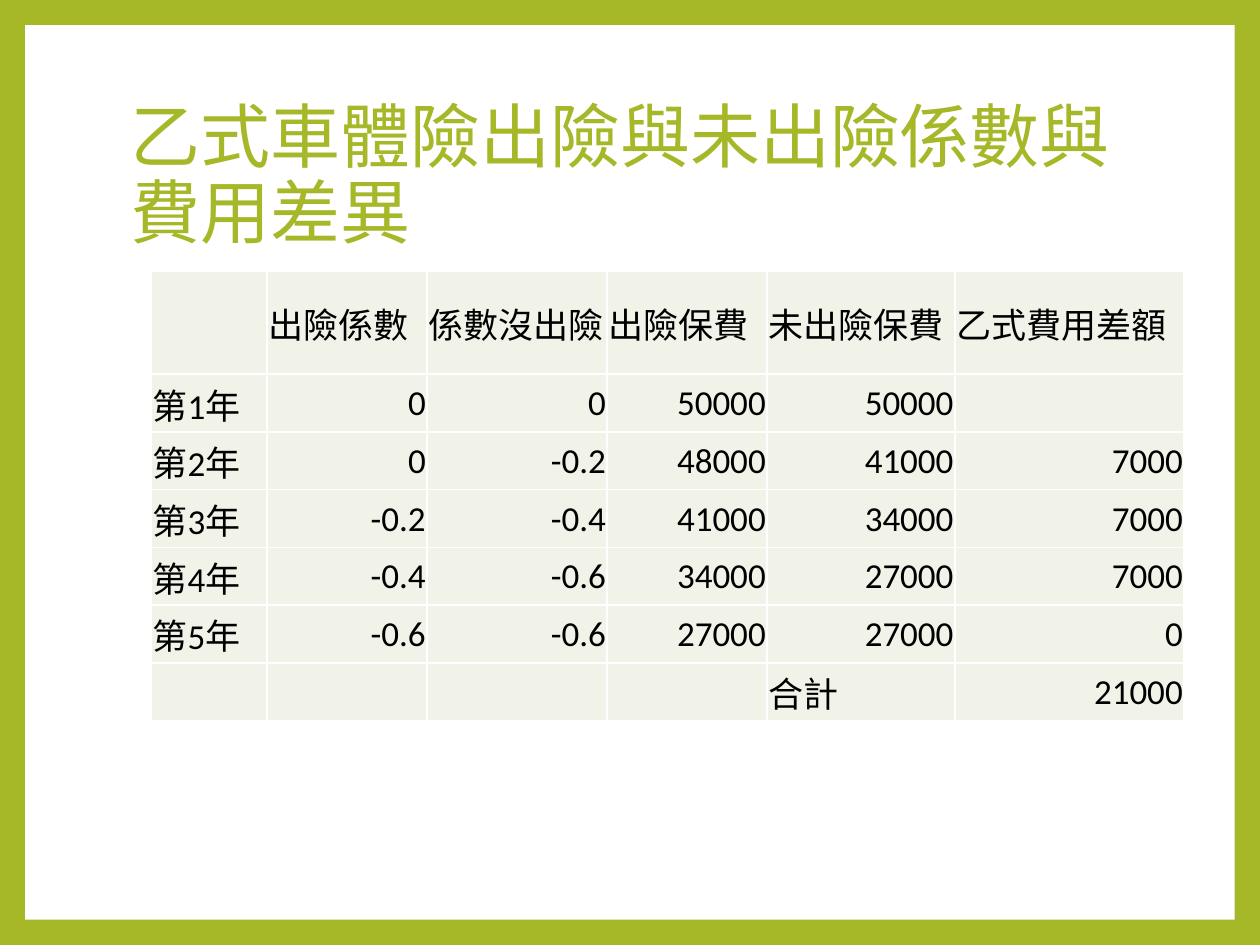
from lxml.etree import SubElement
from pptx import Presentation
from pptx.dml.color import RGBColor
from pptx.enum.shapes import MSO_SHAPE
from pptx.enum.text import MSO_ANCHOR, PP_ALIGN
from pptx.oxml.ns import qn
from pptx.util import Pt

GREEN = RGBColor(0xA6, 0xB7, 0x27)
PALE = RGBColor(0xF1, 0xF3, 0xE8)
WHITE = RGBColor(0xFF, 0xFF, 0xFF)
BLACK = RGBColor(0x00, 0x00, 0x00)
FONT = "Calibri"

TITLE = "乙式車體險出險與未出險係數與費用差異"
COLUMN_WIDTHS = [66.24, 91.44, 102.96, 91.44, 107.28, 131.04]
HEADER_HEIGHT, ROW_HEIGHT = 59.04, 33
ROWS = [
    ["", "出險係數", "係數沒出險", "出險保費", "未出險保費", "乙式費用差額"],
    ["第1年", "0", "0", "50000", "50000", ""],
    ["第2年", "0", "-0.2", "48000", "41000", "7000"],
    ["第3年", "-0.2", "-0.4", "41000", "34000", "7000"],
    ["第4年", "-0.4", "-0.6", "34000", "27000", "7000"],
    ["第5年", "-0.6", "-0.6", "27000", "27000", "0"],
    ["", "", "", "", "合計", "21000"],
]


def write_text(frame, text, size, color, align=PP_ALIGN.LEFT, spacing=None):
    para = frame.paragraphs[0]
    para.alignment = align
    para.line_spacing = spacing
    span = para.add_run()
    span.text = text
    span.font.name = FONT
    span.font.size = Pt(size)
    span.font.color.rgb = color


def add_panel(page, left, top, width, height):
    panel = page.shapes.add_shape(
        MSO_SHAPE.RECTANGLE, Pt(left), Pt(top), Pt(width), Pt(height))
    panel.shadow.inherit = False
    panel.fill.solid()
    panel.fill.fore_color.rgb = WHITE
    panel.line.fill.background()


def add_title(page, text, left, top, width, height):
    box = page.shapes.add_textbox(Pt(left), Pt(top), Pt(width), Pt(height))
    frame = box.text_frame
    frame.word_wrap = True
    frame.vertical_anchor = MSO_ANCHOR.MIDDLE
    write_text(frame, text, size=40, color=GREEN, spacing=0.9)


def add_borders(cell, color, width):
    properties = cell._tc.get_or_add_tcPr()
    for side in ("a:lnL", "a:lnR", "a:lnT", "a:lnB"):
        line = SubElement(properties, qn(side), w=str(Pt(width)))
        fill = SubElement(line, qn("a:solidFill"))
        SubElement(fill, qn("a:srgbClr"), val=str(color))


def format_cell(cell, text):
    # Borders come before the fill in the cell properties
    add_borders(cell, WHITE, width=1)
    cell.fill.solid()
    cell.fill.fore_color.rgb = PALE
    cell.vertical_anchor = MSO_ANCHOR.MIDDLE
    cell.margin_left = cell.margin_right = cell.margin_top = Pt(0.75)
    cell.margin_bottom = Pt(0)
    if text:
        is_number = text.lstrip("-")[0].isdigit()
        align = PP_ALIGN.RIGHT if is_number else PP_ALIGN.LEFT
        write_text(cell.text_frame, text, size=20, color=BLACK, align=align)


def add_cost_table(page, left, top):
    heights = [HEADER_HEIGHT] + [ROW_HEIGHT] * (len(ROWS) - 1)
    table = page.shapes.add_table(
        len(ROWS), len(COLUMN_WIDTHS), Pt(left), Pt(top),
        Pt(sum(COLUMN_WIDTHS)), Pt(sum(heights))).table
    table.first_row = False
    table.horz_banding = False
    for column, width in zip(table.columns, COLUMN_WIDTHS):
        column.width = Pt(width)
    for row, height, texts in zip(table.rows, heights, ROWS):
        row.height = Pt(height)
        for cell, text in zip(row.cells, texts):
            format_cell(cell, text)


def main():
    deck = Presentation()
    deck.slide_width, deck.slide_height = Pt(720), Pt(540)
    page = deck.slides.add_slide(deck.slide_layouts[6])

    # Green frame around a white panel
    page.background.fill.solid()
    page.background.fill.fore_color.rgb = GREEN
    add_panel(page, 14.4, 14.4, 691.2, 511.2)

    # Title and table
    add_title(page, TITLE, 67.7, 48.2, 583.2, 106.6)
    add_cost_table(page, 86.4, 154.8)

    deck.save("out.pptx")


if __name__ == "__main__":
    main()
